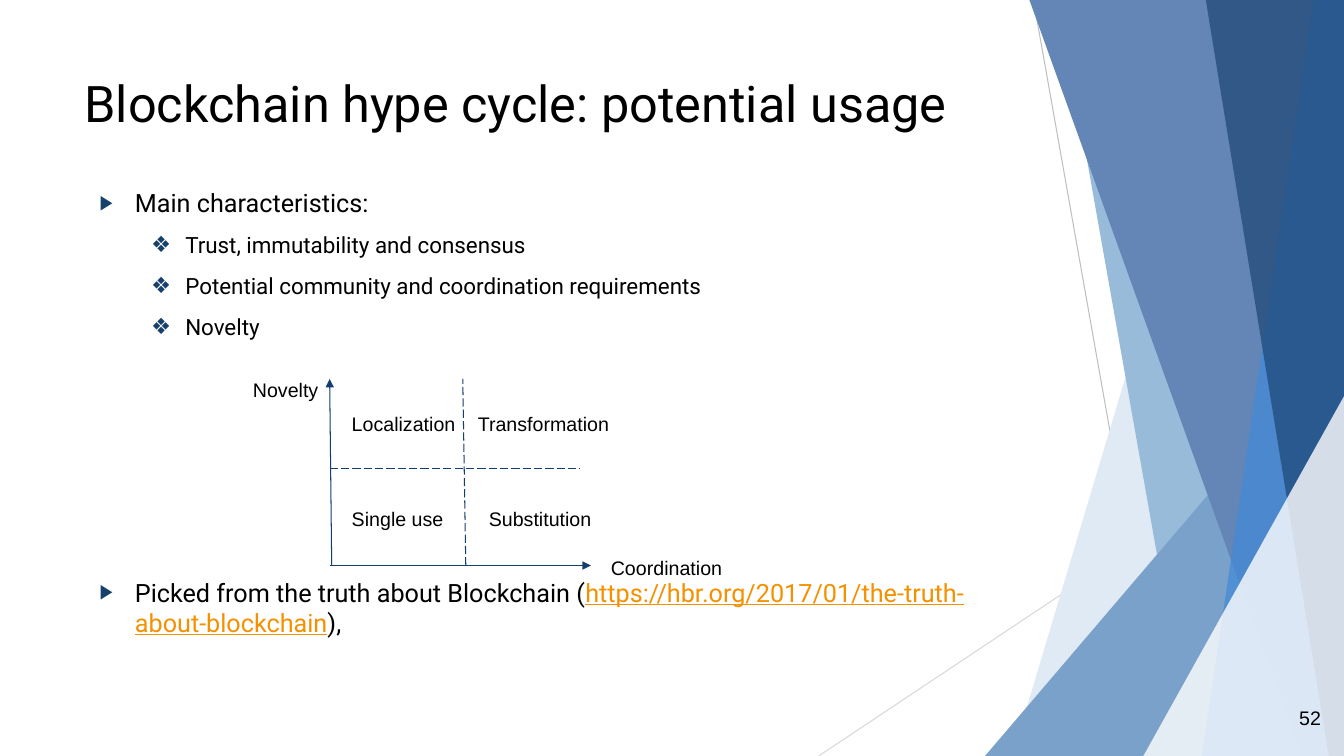
from lxml import etree
from pptx import Presentation
from pptx.dml.color import RGBColor
from pptx.enum.dml import MSO_LINE
from pptx.enum.shapes import MSO_CONNECTOR, MSO_SHAPE
from pptx.enum.text import PP_ALIGN
from pptx.oxml.ns import qn
from pptx.util import Inches, Pt

STRAIGHT = MSO_CONNECTOR.STRAIGHT
TRIANGLE = MSO_SHAPE.ISOSCELES_TRIANGLE
DASH = MSO_LINE.LONG_DASH
RIGHT = PP_ALIGN.RIGHT

COLORS = {
    "text": "000000", "link": "F49100", "bullet": "17406D", "axis": "143E6D",
    "gray": "BFBFBF", "light gray": "D8D8D8", "pale": "DFEAF4",
    "sky": "98BBDA", "steel": "79A1CA", "slate": "6386B6",
    "bright": "418AD8", "navy": "17406D", "white": "FFFFFF",
}
WIDTH, HEIGHT = 13.33, 7.5

deck = Presentation()
deck.slide_width, deck.slide_height = Inches(WIDTH), Inches(HEIGHT)
page = deck.slides.add_slide(deck.slide_layouts[6])


def write_span(paragraph, text, size=14, font="Arial", color="text", underline=False):
    span = paragraph.add_run()
    span.text = text
    span.font.size = Pt(size)
    span.font.name = font
    span.font.underline = underline
    span.font.color.rgb = RGBColor.from_string(COLORS[color])


def draw_line(start, end, color="axis", dash=None, arrow=False):
    line = page.shapes.add_connector(STRAIGHT, *map(Inches, start + end))
    line.line.color.rgb = RGBColor.from_string(COLORS[color])
    line.line.width = Pt(0.75)
    if dash:
        line.line.dash_style = dash
    properties = line._element.spPr
    if arrow:
        outline = properties.find(qn("a:ln"))
        etree.SubElement(outline, qn("a:tailEnd"), type="triangle")
    etree.SubElement(properties, qn("a:effectLst"))


# Thin lines behind the facets
draw_line((10.25, 0), (11.58, HEIGHT), color="gray")
draw_line((WIDTH, 4.03), (8.12, HEIGHT), color="light gray")

# Facets reaching the right edge: kind, left x at top, left x at bottom, colour, opacity.
# A triangle gives its top y in place of the x at top.
facets = [
    ("band", 12.28, 10.04, "pale", 100),
    ("band", 10.5, 11.83, "sky", 100),
    ("triangle", 3.33, 9.77, "steel", 100),
    ("band", 10.21, 12.91, "slate", 100),
    ("band", 13.03, 11.92, "bright", 70),
    ("band", 11.96, 13.18, "navy", 65),
    ("triangle", 3.93, 11.34, "white", 80),
]
for kind, top, bottom_x, color, opacity in facets:
    if kind == "triangle":
        facet = page.shapes.add_shape(
            TRIANGLE, Inches(bottom_x), Inches(top),
            Inches(WIDTH - bottom_x), Inches(HEIGHT - top))
        facet.adjustments[0] = 1
    else:
        outline = page.shapes.build_freeform(Inches(top), 0)
        corners = [(WIDTH, 0), (WIDTH, HEIGHT), (bottom_x, HEIGHT)]
        outline.add_line_segments([(Inches(x), Inches(y)) for x, y in corners])
        facet = outline.convert_to_shape()
    facet.shadow.inherit = False
    facet.line.fill.background()
    facet.fill.solid()
    facet.fill.fore_color.rgb = RGBColor.from_string(COLORS[color])
    if opacity < 100:
        tint = facet._element.spPr.find(qn("a:solidFill"))[0]
        etree.SubElement(tint, qn("a:alpha"), val=str(opacity * 1000))

# Body text: level, space before, spans; the wide space leaves room for the chart
body = page.shapes.add_textbox(Inches(0.74), Inches(1.81), Inches(9.4), Inches(4.8))
body.text_frame.word_wrap = True
levels = [
    {"indent": 0.5, "hang": 0.35, "size": 18, "bullet": "▶", "scale": 80},
    {"indent": 1, "hang": 0.34, "size": 16, "bullet": "❖", "scale": 100},
]
items = [
    (0, 0, [("Main characteristics:", {})]),
    (1, 10, [("Trust, immutability and consensus", {})]),
    (1, 10, [("Potential community and coordination requirements", {})]),
    (1, 10, [("Novelty", {})]),
    (0, 169, [
        ("Picked from the truth about Blockchain (", {}),
        ("https://hbr.org/2017/01/the-truth-about-blockchain",
         {"color": "link", "underline": True}),
        ("),", {}),
    ]),
]
for index, (level, space, spans) in enumerate(items):
    frame = body.text_frame
    paragraph = frame.add_paragraph() if index else frame.paragraphs[0]
    paragraph.level = level
    paragraph.space_before = Pt(space)
    style = levels[level]
    properties = paragraph._p.get_or_add_pPr()
    properties.set("marL", str(Inches(style["indent"])))
    properties.set("indent", str(-Inches(style["hang"])))
    bullet_color = etree.SubElement(properties, qn("a:buClr"))
    etree.SubElement(bullet_color, qn("a:srgbClr"), val=COLORS["bullet"])
    etree.SubElement(properties, qn("a:buSzPct"), val=str(style["scale"] * 1000))
    etree.SubElement(properties, qn("a:buFont"), typeface="Arial")
    etree.SubElement(properties, qn("a:buChar"), char=style["bullet"])
    for text, look in spans:
        write_span(paragraph, text, size=style["size"], font="Roboto", **look)

# Quadrant axes and dashed dividers
draw_line((3.29, 5.61), (3.27, 3.76), arrow=True)
draw_line((3.27, 5.61), (5.86, 5.61), arrow=True)
draw_line((3.27, 4.65), (5.75, 4.65), dash=DASH)
draw_line((4.62, 5.61), (4.59, 3.76), dash=DASH)

# Title, quadrant labels and page number: text, left, top, width, height, wrap, align, format
texts = [
    ("Blockchain hype cycle: potential usage", 0.74, 0.67, 9.97, 0.98, True, None,
     {"size": 36, "font": "Roboto"}),
    ("Localization", 3.39, 4.04, 1.24, 0.34, False, None, {}),
    ("Single use", 3.39, 4.98, 1.12, 0.34, False, None, {}),
    ("Transformation", 4.64, 4.04, 1.52, 0.34, False, None, {}),
    ("Substitution", 4.75, 4.98, 1.23, 0.34, False, None, {}),
    ("Novelty", 2.41, 3.7, 0.86, 0.34, False, None, {}),
    ("Coordination", 5.96, 5.47, 1.31, 0.34, False, None, {}),
    ("52", 10.2, 6.95, 3, 0.4, True, RIGHT, {}),
]
for text, left, top, width, height, wrap, align, look in texts:
    box = page.shapes.add_textbox(Inches(left), Inches(top), Inches(width), Inches(height))
    box.text_frame.word_wrap = wrap
    paragraph = box.text_frame.paragraphs[0]
    paragraph.alignment = align
    write_span(paragraph, text, **look)

deck.save("out.pptx")
